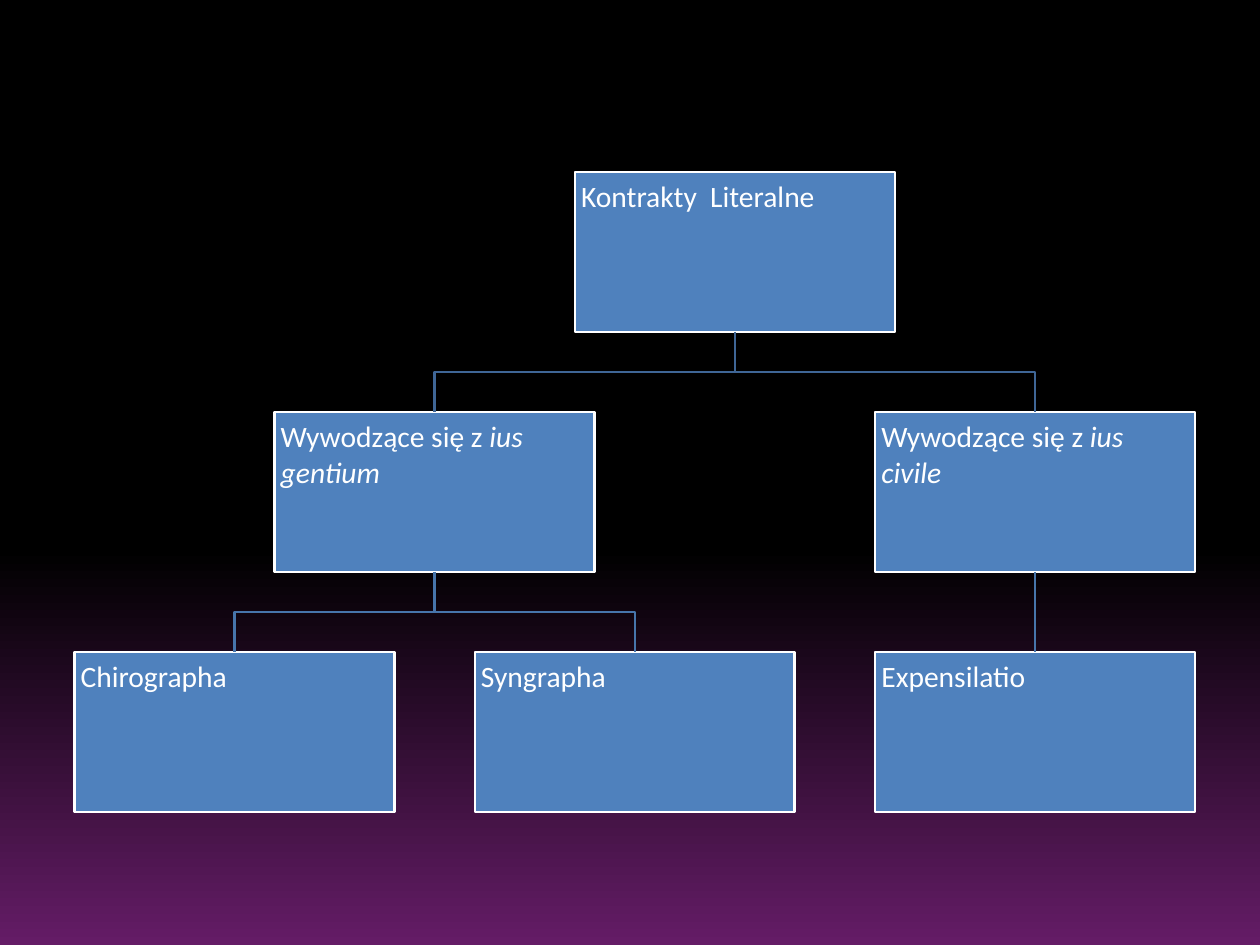
from pptx import Presentation
from pptx.dml.color import RGBColor
from pptx.enum.shapes import MSO_CONNECTOR, MSO_SHAPE
from pptx.enum.text import MSO_ANCHOR, PP_ALIGN
from pptx.oxml.ns import qn
from pptx.util import Pt
from lxml import etree

RECT = MSO_SHAPE.RECTANGLE
STRAIGHT = MSO_CONNECTOR.STRAIGHT
TOP, LEFT = MSO_ANCHOR.TOP, PP_ALIGN.LEFT

BOX_W, BOX_H = 260, 130
X0, Y0 = 60.5, 139.7
HALF_COL, ROW = 162.7, 195.1

# name: (half columns from the left, row, plain text, italic text)
NODES = {
    "root": (2.5, 0, "Kontrakty  Literalne", ""),
    "gentium": (1, 1, "Wywodzące się z ", "ius gentium"),
    "civile": (4, 1, "Wywodzące się z ", "ius civile"),
    "chiro": (0, 2, "Chirographa", ""),
    "syn": (2, 2, "Syngrapha", ""),
    "expen": (4, 2, "Expensilatio", ""),
}
LINKS = [
    ("root", "gentium", "3F6696"),
    ("root", "civile", "3F6696"),
    ("gentium", "chiro", "4775AB"),
    ("gentium", "syn", "4775AB"),
    ("civile", "expen", "4775AB"),
]


def color(code):
    return RGBColor.from_string(code)


class Chart:
    font, size, ink, fill, width = "Calibri", 24, "FFFFFF", "4F81BD", 2

    def __init__(self, slide):
        self.slide = slide

    def backdrop(self, stops):
        fill = self.slide.background.fill
        fill.gradient()
        fill.gradient_angle = 270
        for stop, (place, code) in zip(fill.gradient_stops, stops):
            stop.position = place
            stop.color.rgb = color(code)

    def stroke(self, line, code):
        line.color.rgb = color(code)
        line.width = Pt(self.width)

    def box(self, col, row, plain, slanted):
        box = self.slide.shapes.add_shape(
            RECT, Pt(X0 + col * HALF_COL), Pt(Y0 + row * ROW), Pt(BOX_W), Pt(BOX_H))
        box.shadow.inherit = False
        box.fill.solid()
        box.fill.fore_color.rgb = color(self.fill)
        self.stroke(box.line, self.ink)
        frame = box.text_frame
        frame.word_wrap = True
        frame.vertical_anchor = TOP
        frame.margin_left = frame.margin_right = Pt(5)
        frame.margin_top = frame.margin_bottom = Pt(5)
        frame.text = plain
        para = frame.paragraphs[0]
        para.alignment = LEFT
        if slanted:
            run = para.add_run()
            run.text = slanted
            run.font.italic = True
        for run in para.runs:
            run.font.name = self.font
            run.font.size = Pt(self.size)
            run.font.color.rgb = color(self.ink)
        return box

    def link(self, upper, lower, code):
        """Join two boxes: straight if they share a column, else by an elbow."""
        x1, y1 = upper.left + upper.width // 2, upper.top + upper.height
        x2, y2 = lower.left + lower.width // 2, lower.top
        if x1 == x2:
            line = self.slide.shapes.add_connector(STRAIGHT, x1, y1, x2, y2)
            line.begin_connect(upper, 2)
            line.end_connect(lower, 0)
            etree.SubElement(line._element.spPr, qn("a:effectLst"))
            self.stroke(line.line, code)
            return
        mid = (y1 + y2) // 2
        path = self.slide.shapes.build_freeform(x1, y1)
        path.add_line_segments([(x1, mid), (x2, mid), (x2, y2)], close=False)
        elbow = path.convert_to_shape()
        elbow.shadow.inherit = False
        elbow.fill.background()
        self.stroke(elbow.line, code)


def main():
    deck = Presentation()
    deck.slide_width, deck.slide_height = Pt(1024), Pt(768)
    chart = Chart(deck.slides.add_slide(deck.slide_layouts[6]))
    chart.backdrop([(0.58, "000000"), (1, "641C66")])
    boxes = {name: chart.box(*node) for name, node in NODES.items()}
    for upper, lower, code in LINKS:
        chart.link(boxes[upper], boxes[lower], code)
    deck.save("out.pptx")


if __name__ == "__main__":
    main()
